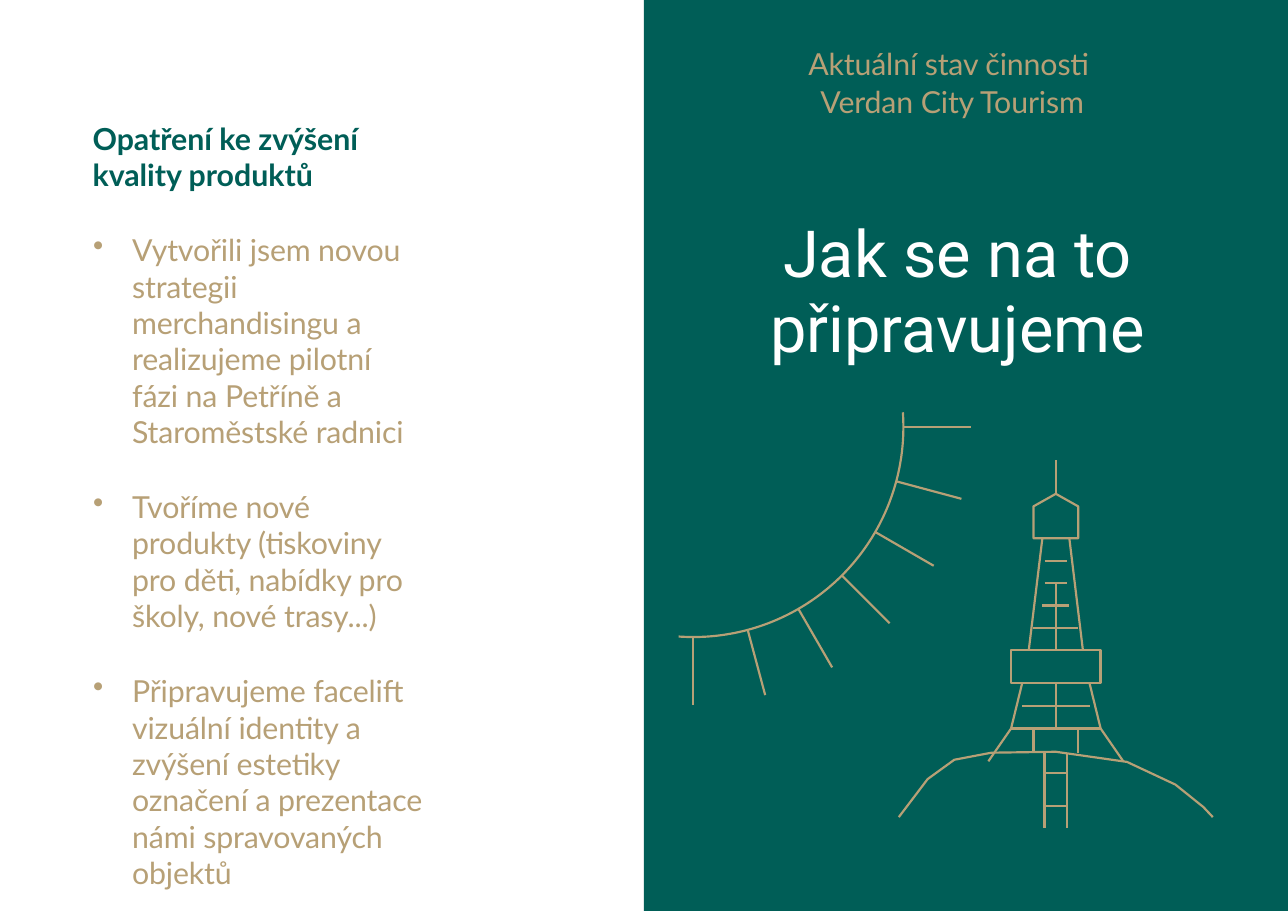
from dataclasses import dataclass
from math import cos, radians, sin

from lxml import etree
from pptx import Presentation
from pptx.dml.color import RGBColor
from pptx.enum.shapes import MSO_CONNECTOR, MSO_SHAPE
from pptx.enum.text import PP_ALIGN
from pptx.oxml.ns import qn
from pptx.util import Cm, Pt

STRAIGHT = MSO_CONNECTOR.STRAIGHT
RECTANGLE = MSO_SHAPE.RECTANGLE
LEFT, CENTER = PP_ALIGN.LEFT, PP_ALIGN.CENTER
TOP, BOTTOM = 0, 2


@dataclass(frozen=True)
class Theme:
    green: RGBColor = RGBColor(0x00, 0x5E, 0x57)
    gold: RGBColor = RGBColor(0xB7, 0xA0, 0x76)
    white: RGBColor = RGBColor(0xFF, 0xFF, 0xFF)
    body_font: str = "Lato"
    title_font: str = "Roboto"
    body_size: int = 28
    title_size: int = 60
    line_width: int = 2


class Deck:
    """Holds the theme and the current slide, and draws elements in cm."""

    def __init__(self, slide, theme):
        self.s = slide
        self.theme = theme

    def outline(self, shape):
        shape.line.color.rgb = self.theme.gold
        shape.line.width = Pt(self.theme.line_width)

    def box(self, x, y, w, h, fill=None):
        sp = self.s.shapes.add_shape(RECTANGLE, Cm(x), Cm(y), Cm(w), Cm(h))
        sp.shadow.inherit = False
        if fill is None:
            sp.fill.background()
            self.outline(sp)
        else:
            sp.fill.solid()
            sp.fill.fore_color.rgb = fill
            sp.line.fill.background()
        return sp

    def line(self, x1, y1, x2, y2, start=None):
        c = self.s.shapes.add_connector(STRAIGHT, Cm(x1), Cm(y1), Cm(x2), Cm(y2))
        self.outline(c)
        etree.SubElement(c._element.spPr, qn("a:effectLst"))
        if start:
            c.begin_connect(*start)

    def path_line(self, points, close=False):
        first, *rest = [(Cm(x), Cm(y)) for x, y in points]
        builder = self.s.shapes.build_freeform(*first)
        builder.add_line_segments(rest, close=close)
        sp = builder.convert_to_shape()
        sp.shadow.inherit = False
        sp.fill.background()
        self.outline(sp)

    def text(self, x, y, w, h, margin_top=0.03):
        tf = self.s.shapes.add_textbox(Cm(x), Cm(y), Cm(w), Cm(h)).text_frame
        frame_format = {
            "word_wrap": True, "margin_left": 0, "margin_right": 0,
            "margin_top": Cm(margin_top), "margin_bottom": 0,
        }
        for name, value in frame_format.items():
            setattr(tf, name, value)
        return tf

    def paragraph(self, tf, words, color, font=None, size=None, bold=False,
                  align=LEFT, before=1, spacing=None, tracking=0,
                  right=0, bullet=False):
        p = tf.paragraphs[0]
        if p.runs:
            p = tf.add_paragraph()
        p_format = {"alignment": align, "space_before": Pt(before),
                    "line_spacing": spacing}
        for name, value in p_format.items():
            setattr(p, name, value)

        r = p.add_run()
        r.text = words
        r_format = {"name": font or self.theme.body_font,
                    "size": Pt(size or self.theme.body_size), "bold": bold}
        for name, value in r_format.items():
            setattr(r.font, name, value)
        r.font.color.rgb = color
        if tracking:
            r.font._element.set("spc", str(tracking))

        pPr = p._p.get_or_add_pPr()
        pPr.set("marR", str(Cm(right)))
        if bullet:
            pPr.set("marL", str(Cm(1.29)))
            pPr.set("indent", str(Cm(-1.27)))
            etree.SubElement(pPr, qn("a:buChar"), char="•")


def draw_sun(deck):
    cx, cy, radius, ray = 22.61, 13.92, 6.85, 2.2

    def polar(r, degrees):
        a = radians(degrees)
        return cx + r * cos(a), cy + r * sin(a)

    deck.path_line([polar(radius, d) for d in range(-4, 95)])
    for d in range(0, 91, 15):
        deck.line(*polar(radius, d), *polar(radius + ray, d))


def draw_tower(deck):
    mid = 34.43

    # Head and spire
    deck.path_line([(mid + 0.73, 17.55), (mid - 0.73, 17.55), (mid - 0.73, 16.51),
                    (mid, 16.1), (mid + 0.73, 16.51)], close=True)
    deck.line(mid, 16.1, mid, 15.01)

    # Platform and the masts above and below it
    platform = deck.box(mid - 1.46, 21.18, 2.92, 1.1)
    deck.line(mid, 21.18, mid, 19, start=(platform, TOP))
    deck.line(mid, 22.28, mid, 23.74, start=(platform, BOTTOM))

    # Mirrored legs, feet and posts: offset and height at each end
    for x1, y1, x2, y2 in [
        (0.44, 17.55, 0.88, 21.18),
        (1.1, 22.28, 1.46, 23.75),
        (1.46, 23.75, 2.2, 24.82),
        (0.73, 23.75, 0.73, 24.54),
        (0.37, 24.54, 0.37, 27),
    ]:
        for side in (-1, 1):
            deck.line(mid + side * x1, y1, mid + side * x2, y2)

    # Crossbars: half width and height
    for half, y in [(0.37, 18.28), (0.37, 19), (0.44, 19.74), (0.73, 20.47),
                    (1.1, 23.01), (1.46, 23.75)]:
        deck.line(mid - half, y, mid + half, y)

    # Step between the lowest posts
    deck.box(mid - 0.37, 25.2, 0.74, 1.09)


def main():
    prs = Presentation()
    prs.slide_width, prs.slide_height = Cm(42), Cm(29.7)
    theme = Theme()
    deck = Deck(prs.slides.add_slide(prs.slide_layouts[6]), theme)

    # Right half with its header
    deck.box(21, 0, 21, 29.7, fill=theme.green)
    tf = deck.text(23.47, 1.45, 15.16, 2.46)
    for words in ("Aktuální stav činnosti ", "Verdan City Tourism"):
        deck.paragraph(tf, words, theme.gold, align=CENTER, tracking=-10)

    # Drawing
    draw_tower(deck)
    deck.path_line([(29.31, 26.64), (30.25, 25.4), (31.12, 24.77),
                    (32.33, 24.54), (34.43, 24.51), (36.75, 24.84),
                    (38.33, 25.58), (39.24, 26.31), (39.55, 26.64)])
    draw_sun(deck)

    # Left half: heading and measures, each with its right indent
    tf = deck.text(3.02, 3.89, 14.05, 20.62)
    deck.paragraph(tf, "Opatření ke zvýšení kvality produktů", theme.green,
                   bold=True, right=3.7)
    for words, right in [
        ("Vytvořili jsem novou strategii merchandisingu a realizujeme "
         "pilotní fázi na Petříně a Staroměstské radnici", 3.7),
        ("Tvoříme nové produkty (tiskoviny pro děti, nabídky pro školy, "
         "nové trasy...)", 3.7),
        ("Připravujeme facelift vizuální identity a zvýšení estetiky "
         "označení a prezentace námi spravovaných objektů", 2.9),
    ]:
        deck.paragraph(tf, words, theme.gold, before=35.6, tracking=-10,
                       right=right, bullet=True)

    # Title
    tf = deck.text(23.47, 6.81, 15.52, 5.16, margin_top=0.18)
    deck.paragraph(tf, "Jak se na to připravujeme", theme.white,
                   font=theme.title_font, size=theme.title_size,
                   align=CENTER, before=5, spacing=Pt(70))

    prs.save("out.pptx")


if __name__ == "__main__":
    main()
